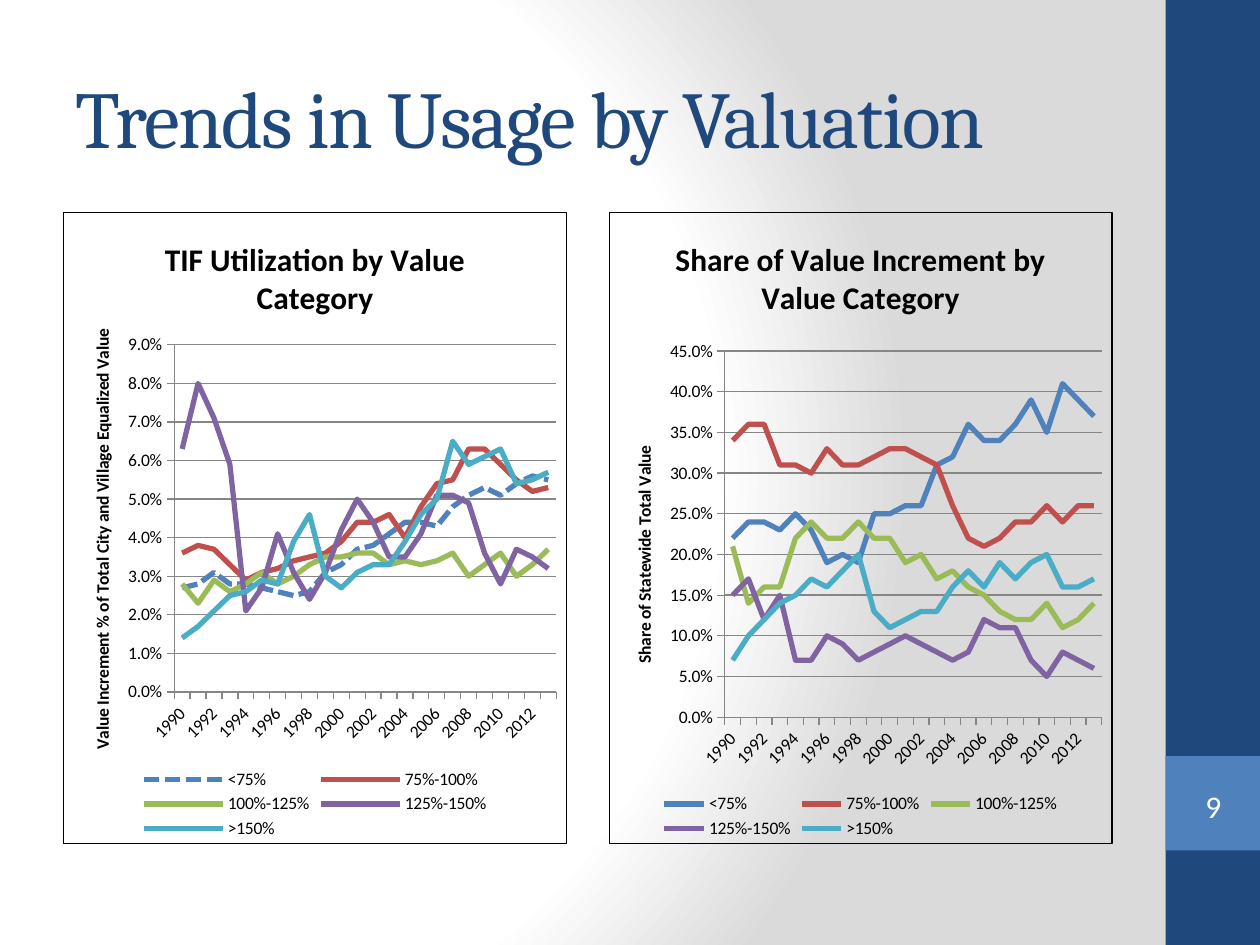
from lxml.etree import SubElement
from pptx import Presentation
from pptx.chart.data import CategoryChartData
from pptx.dml.color import RGBColor
from pptx.enum.chart import XL_CHART_TYPE, XL_LEGEND_POSITION, XL_TICK_MARK
from pptx.enum.dml import MSO_LINE
from pptx.enum.shapes import MSO_SHAPE
from pptx.enum.text import MSO_ANCHOR, PP_ALIGN
from pptx.oxml import parse_xml
from pptx.oxml.ns import nsdecls, qn
from pptx.util import Inches, Pt

COLORS = {
    "navy": "1F497D", "blue": "4F81BD", "white": "FFFFFF", "gray": "DADADA",
    "black": "000000", "grid": "868686", "red": "C0504D", "green": "9BBB59",
    "purple": "8064A2", "teal": "4BACC6",
}
SERIES = [("<75%", "blue"), ("75%-100%", "red"), ("100%-125%", "green"),
          ("125%-150%", "purple"), (">150%", "teal")]
YEARS = [str(year) for year in range(1990, 2014)]

# Percentages by year, one row per value category
UTILIZATION = [
    [2.7, 2.8, 3.1, 2.8, 2.8, 2.7, 2.6, 2.5, 2.6, 3.1, 3.3, 3.7,
     3.8, 4.1, 4.4, 4.4, 4.3, 4.8, 5.1, 5.3, 5.1, 5.4, 5.6, 5.5],
    [3.6, 3.8, 3.7, 3.3, 2.9, 3.1, 3.2, 3.4, 3.5, 3.6, 3.9, 4.4,
     4.4, 4.6, 4.0, 4.8, 5.4, 5.5, 6.3, 6.3, 5.9, 5.5, 5.2, 5.3],
    [2.8, 2.3, 2.9, 2.6, 2.8, 3.1, 2.8, 3.0, 3.3, 3.5, 3.5, 3.6,
     3.6, 3.3, 3.4, 3.3, 3.4, 3.6, 3.0, 3.3, 3.6, 3.0, 3.3, 3.7],
    [6.3, 8.0, 7.1, 5.9, 2.1, 2.7, 4.1, 3.1, 2.4, 3.1, 4.2, 5.0,
     4.4, 3.5, 3.5, 4.1, 5.1, 5.1, 4.9, 3.6, 2.8, 3.7, 3.5, 3.2],
    [1.4, 1.7, 2.1, 2.5, 2.6, 2.9, 2.8, 3.9, 4.6, 3.0, 2.7, 3.1,
     3.3, 3.3, 3.9, 4.6, 5.0, 6.5, 5.9, 6.1, 6.3, 5.4, 5.5, 5.7],
]
SHARE = [
    [22, 24, 24, 23, 25, 23, 19, 20, 19, 25, 25, 26,
     26, 31, 32, 36, 34, 34, 36, 39, 35, 41, 39, 37],
    [34, 36, 36, 31, 31, 30, 33, 31, 31, 32, 33, 33,
     32, 31, 26, 22, 21, 22, 24, 24, 26, 24, 26, 26],
    [21, 14, 16, 16, 22, 24, 22, 22, 24, 22, 22, 19,
     20, 17, 18, 16, 15, 13, 12, 12, 14, 11, 12, 14],
    [15, 17, 12, 15, 7, 7, 10, 9, 7, 8, 9, 10,
     9, 8, 7, 8, 12, 11, 11, 7, 5, 8, 7, 6],
    [7, 10, 12, 14, 15, 17, 16, 18, 20, 13, 11, 12,
     13, 13, 16, 18, 16, 19, 17, 19, 20, 16, 16, 17],
]


def color(name):
    return RGBColor.from_string(COLORS[name])


def style_font(font, name, size, color_name, bold=False):
    font.name, font.size, font.bold = name, Pt(size), bold
    font.color.rgb = color(color_name)


def set_background(slide):
    """Radial gradient from white to gray."""
    slide.background.fill.solid()
    properties = slide.background._cSld.bg.bgPr
    stops = "".join(
        f'<a:gs pos="{position * 1000}"><a:srgbClr val="{COLORS[name]}"/></a:gs>'
        for position, name in [(0, "white"), (75, "white"), (100, "gray")])
    gradient = parse_xml(
        f'<a:gradFill {nsdecls("a")} rotWithShape="1"><a:gsLst>{stops}</a:gsLst>'
        '<a:path path="circle"><a:fillToRect l="20000" t="50000" r="100000" b="50000"/>'
        '</a:path></a:gradFill>')
    properties.replace(properties.find(qn("a:solidFill")), gradient)


def add_block(slide, top, height, fill):
    """Block of the right-hand side bar."""
    shape = slide.shapes.add_shape(
        MSO_SHAPE.RECTANGLE, Inches(9.25), Inches(top), Inches(0.75), Inches(height))
    shape.shadow.inherit = False
    shape.fill.solid()
    shape.fill.fore_color.rgb = color(fill)
    shape.line.fill.background()


def set_title(slide, text):
    title = slide.shapes.title
    title.left, title.top = Inches(0.5), Inches(0.3)
    title.width, title.height = Inches(8.33), Inches(1.25)
    title.text_frame.vertical_anchor = MSO_ANCHOR.MIDDLE
    paragraph = title.text_frame.paragraphs[0]
    paragraph.alignment = PP_ALIGN.LEFT
    run = paragraph.add_run()
    run.text = text
    style_font(run.font, "Cambria", 46, "navy")
    run.font._element.set("spc", "-100")


def add_page_number(slide, text):
    shape = slide.shapes.add_shape(
        MSO_SHAPE.DOUBLE_BRACKET, Inches(9.33), Inches(6.18), Inches(0.6), Inches(0.43))
    shape.adjustments[0] = 0.18
    shape.shadow.inherit = False
    shape.fill.background()
    shape.line.fill.background()
    frame = shape.text_frame
    frame.margin_left = frame.margin_right = frame.margin_top = frame.margin_bottom = 0
    frame.vertical_anchor = MSO_ANCHOR.MIDDLE
    paragraph = frame.paragraphs[0]
    paragraph.alignment = PP_ALIGN.CENTER
    run = paragraph.add_run()
    run.text = text
    style_font(run.font, "Calibri", 18, "white")


def add_chart_text(frame, text, size):
    run = frame.paragraphs[0].add_run()
    run.text = text
    style_font(run.font, "Calibri", size, "black", bold=True)


def style_axis(axis):
    axis.major_tick_mark = XL_TICK_MARK.OUTSIDE
    axis.minor_tick_mark = XL_TICK_MARK.NONE
    axis.format.line.color.rgb = color("grid")
    axis.format.line.width = Pt(0.75)
    style_font(axis.tick_labels.font, "Calibri", 10, "black")


def frame_chart(chart, plot_box):
    """Black border around the chart and a fixed inner plot area."""
    chart_element = chart._chartSpace.find(qn("c:chart"))
    chart_element.addnext(parse_xml(
        f'<c:spPr {nsdecls("c", "a")}><a:noFill/><a:ln w="9525"><a:solidFill>'
        f'<a:srgbClr val="{COLORS["black"]}"/></a:solidFill></a:ln></c:spPr>'))
    plot_area = chart_element.find(qn("c:plotArea"))
    for layout in plot_area.findall(qn("c:layout")):
        plot_area.remove(layout)
    layout = parse_xml(f'<c:layout {nsdecls("c")}/>')
    manual = SubElement(layout, qn("c:manualLayout"))
    settings = [("layoutTarget", "inner"), ("xMode", "edge"), ("yMode", "edge")]
    settings += zip("xywh", map(str, plot_box))
    for tag, value in settings:
        SubElement(manual, qn(f"c:{tag}")).set("val", value)
    plot_area.insert(0, layout)


def add_line_chart(slide, left, title, axis_title, rows, maximum, step, plot_box):
    data = CategoryChartData(number_format="0.0%")
    data.categories = YEARS
    for (name, _), row in zip(SERIES, rows):
        data.add_series(name, [round(value / 100, 3) for value in row])
    chart = slide.shapes.add_chart(
        XL_CHART_TYPE.LINE, Inches(left), Inches(1.68), Inches(4), Inches(5.02), data).chart
    style_font(chart.font, "Calibri", 10, "black")
    chart.has_title = True
    add_chart_text(chart.chart_title.text_frame, title, 18)
    chart.chart_title.include_in_layout = False
    chart.has_legend = True
    chart.legend.position = XL_LEGEND_POSITION.BOTTOM
    chart.legend.include_in_layout = False
    style_font(chart.legend.font, "Calibri", 10, "black")

    # Value axis
    values = chart.value_axis
    style_axis(values)
    values.minimum_scale, values.maximum_scale, values.major_unit = 0, maximum, step
    values.tick_labels.number_format = "0.0%"
    values.tick_labels.number_format_is_linked = False
    values.major_gridlines.format.line.color.rgb = color("grid")
    values.major_gridlines.format.line.width = Pt(0.75)
    add_chart_text(values.axis_title.text_frame, axis_title, 10)

    # Year axis: every second label, slanted
    years = chart.category_axis
    style_axis(years)
    years._element.find(qn("c:txPr")).find(qn("a:bodyPr")).set("rot", "-2700000")
    years._element.find(qn("c:noMultiLvlLbl")).addprevious(
        parse_xml(f'<c:tickLblSkip {nsdecls("c")} val="2"/>'))

    # Lines
    chart.plots[0].vary_by_categories = False
    for series, (_, name) in zip(chart.plots[0].series, SERIES):
        series.smooth = False
        series.format.line.color.rgb = color(name)
        series.format.line.width = Pt(3)
    frame_chart(chart, plot_box)
    return chart


def main():
    presentation = Presentation()
    presentation.slide_width, presentation.slide_height = Inches(10), Inches(7.5)
    slide = presentation.slides.add_slide(presentation.slide_layouts[5])
    set_background(slide)
    add_block(slide, 0, 7.5, "navy")
    add_block(slide, 6, 0.75, "blue")
    set_title(slide, "Trends in Usage by Valuation")
    utilization = add_line_chart(
        slide, 0.5, "TIF Utilization by Value Category",
        "Value Increment % of Total City and Village Equalized Value",
        UTILIZATION, 0.09, 0.01, (0.22, 0.21, 0.76, 0.55))
    utilization.plots[0].series[0].format.line.dash_style = MSO_LINE.SQUARE_DOT
    add_line_chart(
        slide, 4.83, "Share of Value Increment by Value Category",
        "Share of Statewide Total Value", SHARE, 0.45, 0.05, (0.23, 0.22, 0.75, 0.58))
    add_page_number(slide, "9")
    presentation.save("out.pptx")


if __name__ == "__main__":
    main()
